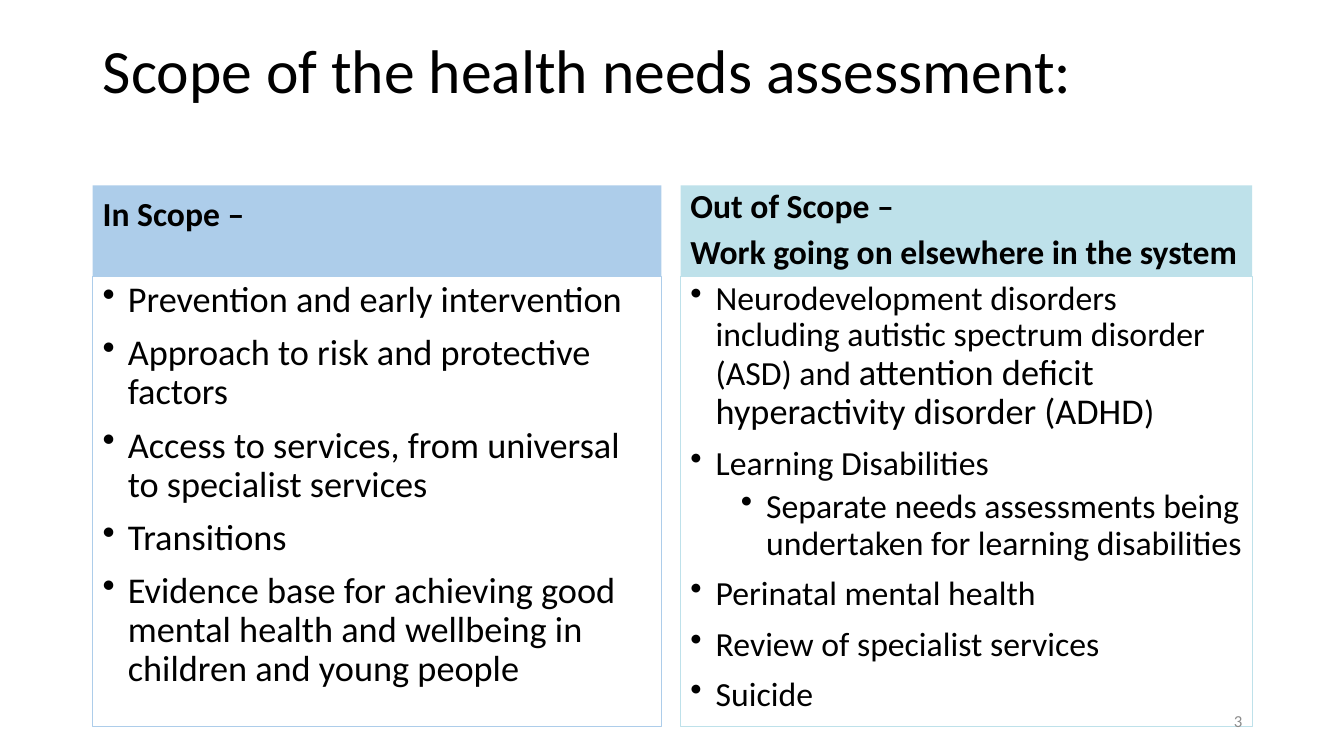
import pptx
import pptx.dml.color
import pptx.enum.shapes
import pptx.enum.text
import pptx.oxml
import pptx.util
from lxml import etree

Inches = pptx.util.Inches
Pt = pptx.util.Pt
RGBColor = pptx.dml.color.RGBColor
ALIGN = pptx.enum.text.PP_ALIGN
ANCHOR = pptx.enum.text.MSO_ANCHOR

BLACK = RGBColor(0x00, 0x00, 0x00)
GREY = RGBColor(0x8C, 0x8C, 0x8C)
BLUE = RGBColor(0xAD, 0xCD, 0xEA)
TEAL = RGBColor(0xBE, 0xE1, 0xEA)
FONT = "Calibri"
LARGE = 25.9
SMALL = 24.1
HEADING_HEIGHT = 0.9

IN_SCOPE = [
    (0, "Prevention and early intervention"),
    (0, "Approach to risk and protective factors"),
    (0, "Access to services, from universal to specialist services"),
    (0, "Transitions"),
    (0, "Evidence base for achieving good mental health and wellbeing in children and young people"),
]
OUT_OF_SCOPE = [
    (0, [
        ("Neurodevelopment disorders including autistic spectrum disorder (ASD) and ", SMALL),
        ("attention deficit hyperactivity disorder (ADHD", LARGE),
        (")", SMALL),
    ]),
    (0, "Learning Disabilities"),
    (1, "Separate needs assessments being undertaken for learning disabilities"),
    (0, "Perinatal mental health"),
    (0, "Review of specialist services"),
    (0, "Suicide"),
]


def style(paragraph, size, color=BLACK, bold=False, align=ALIGN.LEFT):
    """Set the font and alignment of a whole paragraph."""
    paragraph.alignment = align
    paragraph.font.name = FONT
    paragraph.font.size = Pt(size)
    paragraph.font.bold = bold
    paragraph.font.color.rgb = color


def add_bullet(paragraph, level):
    """Give a paragraph a round bullet with a hanging indent."""
    properties = paragraph._p.get_or_add_pPr()
    properties.set("marL", str(Inches(0.25 + 0.5 * level)))
    properties.set("indent", str(Inches(-0.25)))
    bullet = etree.Element(pptx.oxml.ns.qn("a:buChar"), char="•")
    properties.find(pptx.oxml.ns.qn("a:defRPr")).addprevious(bullet)


def add_panel(slide, left, top, width, height, anchor):
    """Add a plain rectangle that is ready for text."""
    panel = slide.shapes.add_shape(
        pptx.enum.shapes.MSO_SHAPE.RECTANGLE,
        Inches(left), Inches(top), Inches(width), Inches(height))
    panel.shadow.inherit = False
    panel.text_frame.word_wrap = True
    panel.text_frame.vertical_anchor = anchor
    return panel


def add_heading(slide, left, top, width, color, lines, spacing, bottom_inset):
    """Add the filled heading of a scope column."""
    heading = add_panel(slide, left, top, width, HEADING_HEIGHT, ANCHOR.BOTTOM)
    heading.fill.solid()
    heading.fill.fore_color.rgb = color
    heading.line.fill.background()
    frame = heading.text_frame
    frame.margin_bottom = Inches(bottom_inset)
    frame.text = "\n".join(lines)
    for paragraph in frame.paragraphs:
        style(paragraph, 24, bold=True)
        paragraph.line_spacing = spacing
        paragraph.space_before = Pt(10)


def add_topics(slide, left, top, width, height, color, topics, size):
    """Add the outlined bullet list of a scope column."""
    box = add_panel(slide, left, top, width, height, ANCHOR.TOP)
    box.fill.background()
    box.line.color.rgb = color
    box.line.width = Pt(0.75)
    frame = box.text_frame
    for index, (level, content) in enumerate(topics):
        paragraph = frame.add_paragraph() if index else frame.paragraphs[0]
        paragraph.level = level
        paragraph.line_spacing = 0.9
        paragraph.space_before = Pt(5 if level else 10)
        style(paragraph, size)
        add_bullet(paragraph, level)
        if isinstance(content, str):
            paragraph.add_run().text = content
            continue
        for text, run_size in content:
            run = paragraph.add_run()
            run.text = text
            run.font.size = Pt(run_size)


def add_column(slide, left, top, width, height, color, lines, spacing, bottom_inset, topics, size):
    """Add a scope column: a heading over its list."""
    add_heading(slide, left, top, width, color, lines, spacing, bottom_inset)
    add_topics(slide, left, top + HEADING_HEIGHT, width, height - HEADING_HEIGHT, color, topics, size)


def add_title(slide, left, top, width, height):
    """Place and format the slide title."""
    title = slide.shapes.title
    title.left, title.top = Inches(left), Inches(top)
    title.width, title.height = Inches(width), Inches(height)
    title.text_frame.text = "Scope of the health needs assessment:"
    title.text_frame.vertical_anchor = ANCHOR.MIDDLE
    paragraph = title.text_frame.paragraphs[0]
    style(paragraph, 44)
    paragraph.line_spacing = 0.9


def add_page_number(slide, left, top, width, height):
    """Add the page number at the lower right."""
    number = slide.shapes.add_textbox(Inches(left), Inches(top), Inches(width), Inches(height))
    frame = number.text_frame
    frame.word_wrap = True
    frame.vertical_anchor = ANCHOR.MIDDLE
    frame.text = "3"
    style(frame.paragraphs[0], 12, GREY, align=ALIGN.RIGHT)


def main():
    """Build the scope slide and save it."""
    presentation = pptx.Presentation()
    presentation.slide_width = Inches(13.33)
    presentation.slide_height = Inches(7.5)
    slide = presentation.slides.add_slide(presentation.slide_layouts.get_by_name("Title Only"))
    add_title(slide, 0.92, 0, 11.5, 1.45)
    add_column(slide, 0.92, 1.84, 5.64, 5.37, BLUE, ["In Scope –"], 0.9, 0.42, IN_SCOPE, LARGE)
    add_column(slide, 6.75, 1.84, 5.67, 5.37, TEAL,
               ["Out of Scope –", "Work going on elsewhere in the system"], 0.8, 0.05,
               OUT_OF_SCOPE, SMALL)
    add_page_number(slide, 9.42, 6.95, 3, 0.4)
    presentation.save("out.pptx")


if __name__ == "__main__":
    main()
